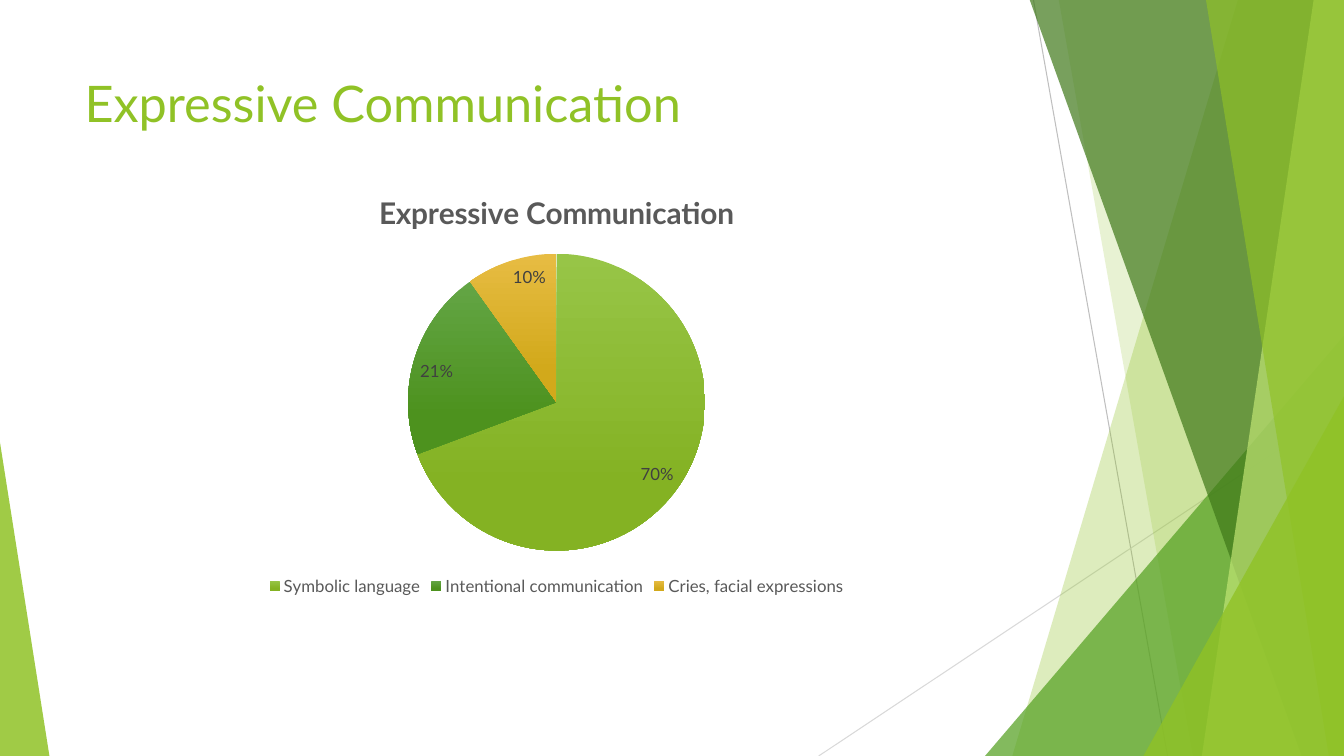
import pptx
import pptx.chart.data
import pptx.dml.color
import pptx.enum.chart
import pptx.enum.shapes
import pptx.enum.text
import pptx.oxml
import pptx.oxml.ns
import pptx.util
from dataclasses import dataclass

Inches = pptx.util.Inches
Pt = pptx.util.Pt
Rgb = pptx.dml.color.RGBColor.from_string
qn = pptx.oxml.ns.qn
WIDE, HIGH = 13.33, 7.5


@dataclass(frozen=True)
class Theme:
    font: str = "Lato"
    lime: str = "90C226"
    green: str = "54A021"
    dark: str = "3F7819"
    pale: str = "C0E474"
    rules: tuple = ("BFBFBF", "D9D9D9")
    ink: str = "595959"
    label: str = "404040"
    slices: tuple = (("97C547", "84B223"), ("63A545", "4D921E"), ("E7BC43", "D2A91B"))
    head: float = 36
    title: float = 21.3
    small: float = 12


THEME = Theme()


def style(font, size, color, bold=False):
    """Apply size, face and colour to a font."""
    looks = {"name": THEME.font, "size": Pt(size), "bold": bold}
    for key, value in looks.items():
        setattr(font, key, value)
    font.color.rgb = Rgb(color)


def tint(shape, color, alpha):
    """Fill a shape with a see-through colour and no outline."""
    shape.shadow.inherit = False
    shape.line.fill.background()
    shape.fill.solid()
    shape.fill.fore_color.rgb = Rgb(color)
    node = shape.fill._xPr.find(".//" + qn("a:srgbClr"))
    pptx.oxml.ns  # namespace helpers
    node.append(pptx.oxml.parse_xml(
        '<a:alpha xmlns:a="http://schemas.openxmlformats.org/drawingml/2006/main"'
        f' val="{alpha * 1000}"/>'))


def rule(slide, start, end, color):
    """Draw one thin line."""
    kind = pptx.enum.shapes.MSO_CONNECTOR.STRAIGHT
    line = slide.shapes.add_connector(kind, *map(Inches, start + end))
    line.line.color.rgb = Rgb(color)
    line.line.width = Pt(0.75)
    line._element.spPr.append(pptx.oxml.parse_xml(
        '<a:effectLst xmlns:a="http://schemas.openxmlformats.org/drawingml/2006/main"/>'))


def band(slide, box, top, foot, color, alpha):
    """Draw a band from its slanted left edge to the right of the box."""
    left, head, width, height = box
    right, base = left + width, head + height
    points = [(top, head), (right, head), (right, base), (foot, base)]
    points = [(Inches(x), Inches(y)) for x, y in points]
    form = slide.shapes.build_freeform(*points[0])
    form.add_line_segments(points[1:], close=True)
    tint(form.convert_to_shape(), color, alpha)


def wedge(slide, box, peak, color, alpha):
    """Draw a triangle whose peak lies at the given share of its width."""
    kind = pptx.enum.shapes.MSO_SHAPE.ISOSCELES_TRIANGLE
    shape = slide.shapes.add_shape(kind, *map(Inches, box))
    shape.adjustments[0] = peak
    tint(shape, color, alpha)


def decor(slide, box):
    """Layer the lines, bands and wedges, back to front."""
    left, top, width, height = box
    right, base = left + width, top + height
    rule(slide, (10.25, top), (11.58, base), THEME.rules[0])
    rule(slide, (right, 4.03), (8.12, base), THEME.rules[1])

    def bands(rows):
        for head, foot, color, alpha in rows:
            edge = min(head, foot)
            area = (edge, top - 0.01, right - edge, height + 0.01)
            band(slide, area, head, foot, color, alpha)

    def corner(wide, high, color, alpha):
        wedge(slide, (right - wide, base - high, wide, high), 1, color, alpha)

    bands([(12.28, 10.04, THEME.lime, 30), (10.5, 11.83, THEME.lime, 20)])
    corner(3.56, 4.17, THEME.green, 72)
    bands([(10.21, 12.91, THEME.dark, 70),
           (13.03, 11.92, THEME.pale, 70),
           (11.96, 13.18, THEME.lime, 65)])
    corner(1.99, 3.57, THEME.lime, 80)
    wedge(slide, (left, base - 3.11, 0.49, 3.11), 0, THEME.lime, 85)


def heading(slide, box, text):
    """Place the slide title."""
    frame = slide.shapes.add_textbox(*map(Inches, box)).text_frame
    frame.word_wrap = True
    frame.vertical_anchor = pptx.enum.text.MSO_ANCHOR.TOP
    run = frame.paragraphs[0].add_run()
    run.text = text
    style(run.font, THEME.head, THEME.lime)


def pie(slide, box, name, shares):
    """Place the pie chart with its title, labels and legend."""
    data = pptx.chart.data.CategoryChartData()
    data.categories = list(shares)
    data.add_series(name, list(shares.values()))
    kind = pptx.enum.chart.XL_CHART_TYPE.PIE
    chart = slide.shapes.add_chart(kind, *map(Inches, box), data).chart
    style(chart.font, THEME.small, THEME.ink)

    # Title and legend
    chart.has_title = True
    run = chart.chart_title.text_frame.paragraphs[0].add_run()
    run.text = name
    style(run.font, THEME.title, THEME.ink, True)
    chart.chart_title.include_in_layout = False
    chart.has_legend = True
    chart.legend.position = pptx.enum.chart.XL_LEGEND_POSITION.BOTTOM
    chart.legend.include_in_layout = False
    style(chart.legend.font, THEME.small, THEME.ink)

    # Slices
    plot = chart.plots[0]
    plot.vary_by_categories = True
    for index, pair in enumerate(THEME.slices):
        fill = plot.series[0].points[index].format.fill
        fill.gradient()
        fill.gradient_angle = 270
        for stop, color, place in zip(fill.gradient_stops, pair, (0, 0.78)):
            stop.color.rgb = Rgb(color)
            stop.position = place

    # Labels
    plot.has_data_labels = True
    labels = plot.data_labels
    looks = {"show_value": True, "number_format": '0"%"',
             "number_format_is_linked": False,
             "position": pptx.enum.chart.XL_LABEL_POSITION.INSIDE_END}
    for key, value in looks.items():
        setattr(labels, key, value)
    style(labels.font, THEME.small, THEME.label)


def main():
    deck = pptx.Presentation()
    deck.slide_width, deck.slide_height = Inches(WIDE), Inches(HIGH)
    slide = deck.slides.add_slide(deck.slide_layouts[6])
    name = "Expressive Communication"
    decor(slide, (0, 0, WIDE, HIGH))
    heading(slide, (0.74, 0.67, 9.4, 1.44), name)
    pie(slide, (0.82, 1.71, 9.4, 4.24), name, {
        "Symbolic language": 70,
        "Intentional communication": 21,
        "Cries, facial expressions": 10,
    })
    deck.save("out.pptx")


if __name__ == "__main__":
    main()
